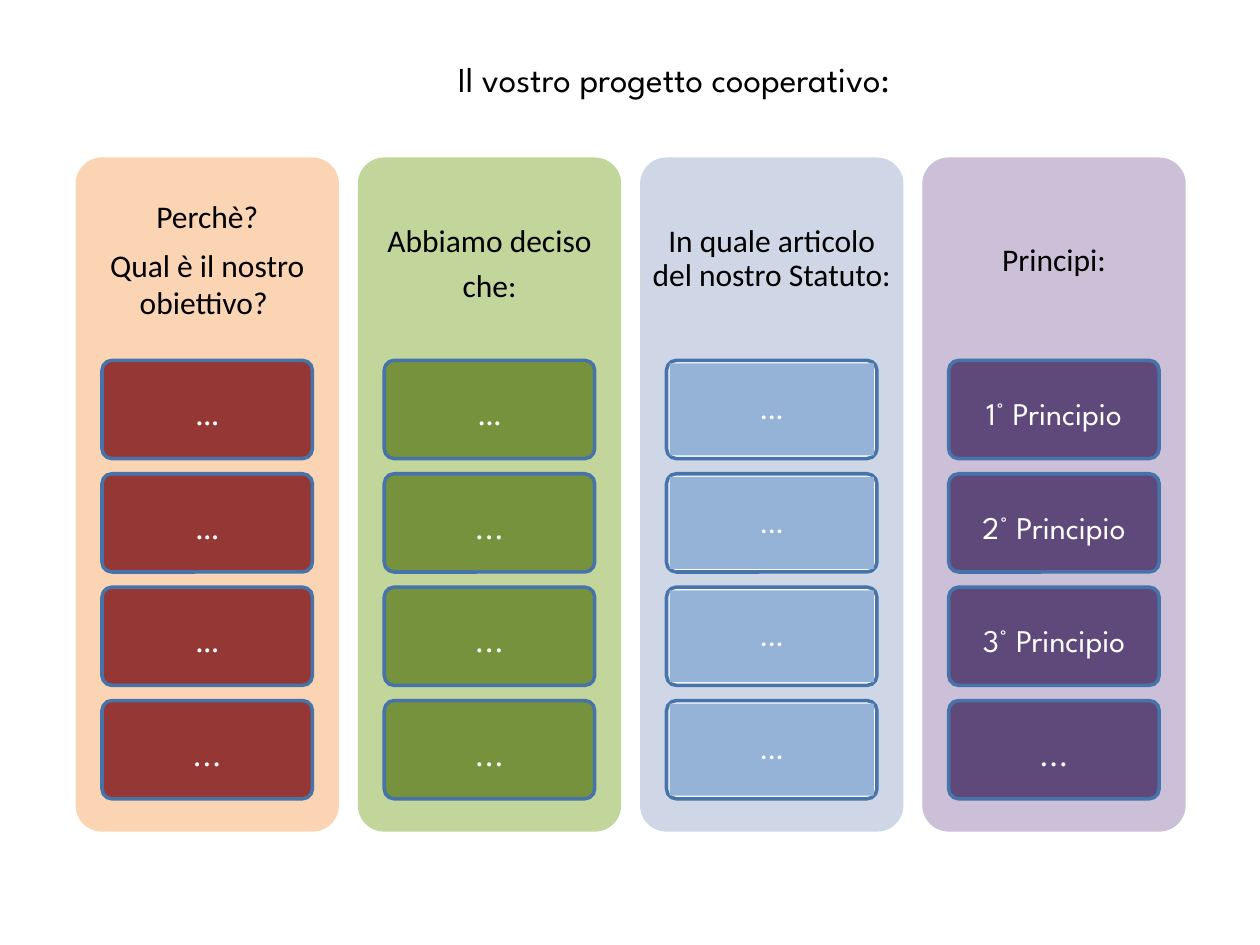
from pptx import Presentation
from pptx.dml.color import RGBColor
from pptx.enum import shapes, text
from pptx.util import Inches, Pt

COLORS = {
    "black": "000000", "white": "FFFFFF", "outline": "4674AA",
    "peach": "FBD4B4", "red": "953734",
    "lime": "C2D59B", "green": "76923C",
    "mist": "CFD7E7", "blue": "95B3D7",
    "lilac": "CCC0D9", "purple": "5F497A",
}
HEAD_FONT, CARD_FONT = "Calibri", "League Spartan"

TITLE = "Il vostro progetto cooperativo:"
# label_fill: colour of the inner label, where it is a filled rectangle
COLUMNS = [
    {"head": ["Perchè?", "Qual è il nostro obiettivo? "], "spacing": 1.0,
     "panel": "peach", "card": "red", "label_fill": None,
     "font": CARD_FONT, "card_spacing": 1.2,
     "cards": ["…", "…", "…", "..."]},
    {"head": ["Abbiamo deciso che:"], "spacing": 1.2,
     "panel": "lime", "card": "green", "label_fill": None,
     "font": CARD_FONT, "card_spacing": 1.2,
     "cards": ["…", "...", "...", "..."]},
    {"head": ["In quale articolo del nostro Statuto:"], "spacing": 0.9,
     "panel": "mist", "card": "white", "label_fill": "blue",
     "font": HEAD_FONT, "card_spacing": 0.9,
     "cards": ["...", "...", "...", "..."]},
    {"head": ["Principi:"], "spacing": 1.0,
     "panel": "lilac", "card": "purple", "label_fill": None,
     "font": CARD_FONT, "card_spacing": 1.2,
     "cards": ["1° Principio", "2° Principio", "3° Principio", "..."]},
]

# Layout in inches
LEFT, TOP, PANEL_W, PANEL_H, COLUMN_STEP = 0.6, 1.25, 2.09, 5.35, 2.24
HEAD_H = 1.61
CARD_W, CARD_H, CARD_STEP = 1.67, 0.78, 0.9
LABEL_PAD = 0.025

prs = Presentation()
prs.slide_width, prs.slide_height = Inches(10), Inches(7.5)
slide = prs.slides.add_slide(prs.slide_layouts[6])


def rgb(name):
    return RGBColor.from_string(COLORS[name])


def add_box(kind, box, fill, line=None):
    sp = slide.shapes.add_shape(kind, *map(Inches, box))
    sp.shadow.inherit = False
    sp.fill.solid()
    sp.fill.fore_color.rgb = rgb(fill)
    if line:
        sp.line.color.rgb = rgb(line)
        sp.line.width = Pt(2)
    else:
        sp.line.fill.background()
    if kind == shapes.MSO_SHAPE.ROUNDED_RECTANGLE:
        sp.adjustments[0] = 0.1
    return sp


def write(sp, lines, font, size, color, margins, spacing=1.0):
    tf = sp.text_frame
    tf.word_wrap = True
    tf.vertical_anchor = text.MSO_ANCHOR.MIDDLE
    (tf.margin_left, tf.margin_top,
     tf.margin_right, tf.margin_bottom) = map(Inches, margins)
    for i, line in enumerate(lines):
        p = tf.add_paragraph() if i else tf.paragraphs[0]
        p.text = line
        p.alignment = text.PP_ALIGN.CENTER
        p.line_spacing = spacing
        if i:
            p.space_before = Pt(6.3)
        p.font.name, p.font.size = font, Pt(size)
        p.font.color.rgb = rgb(color)


def add_text_box(box):
    return slide.shapes.add_textbox(*map(Inches, box))


# Title, moved right of centre by its left margin
write(add_text_box((0, 0, 10, 1.25)), [TITLE], CARD_FONT, 20, "black",
      (1.05, 0.05, 0.35, 0.05))

# Columns: panel, heading and a stack of cards
ROUNDED = shapes.MSO_SHAPE.ROUNDED_RECTANGLE
for i, col in enumerate(COLUMNS):
    x = LEFT + i * COLUMN_STEP
    add_box(ROUNDED, (x, TOP, PANEL_W, PANEL_H), col["panel"])
    write(add_text_box((x, TOP, PANEL_W, HEAD_H)), col["head"], HEAD_FONT, 18,
          "black", (0.07,) * 4, col["spacing"])

    card_x = x + (PANEL_W - CARD_W) / 2
    for j, caption in enumerate(col["cards"]):
        card_y = TOP + HEAD_H + j * CARD_STEP
        add_box(ROUNDED, (card_x, card_y, CARD_W, CARD_H), col["card"], "outline")
        inner = (card_x + LABEL_PAD, card_y + LABEL_PAD,
                 CARD_W - 2 * LABEL_PAD, CARD_H - 2 * LABEL_PAD)
        if col["label_fill"]:
            label = add_box(shapes.MSO_SHAPE.RECTANGLE, inner, col["label_fill"])
        else:
            label = add_text_box(inner)
        write(label, [caption], col["font"], 18, "white",
              (0.05, 0.04, 0.05, 0.04), col["card_spacing"])

prs.save("out.pptx")
